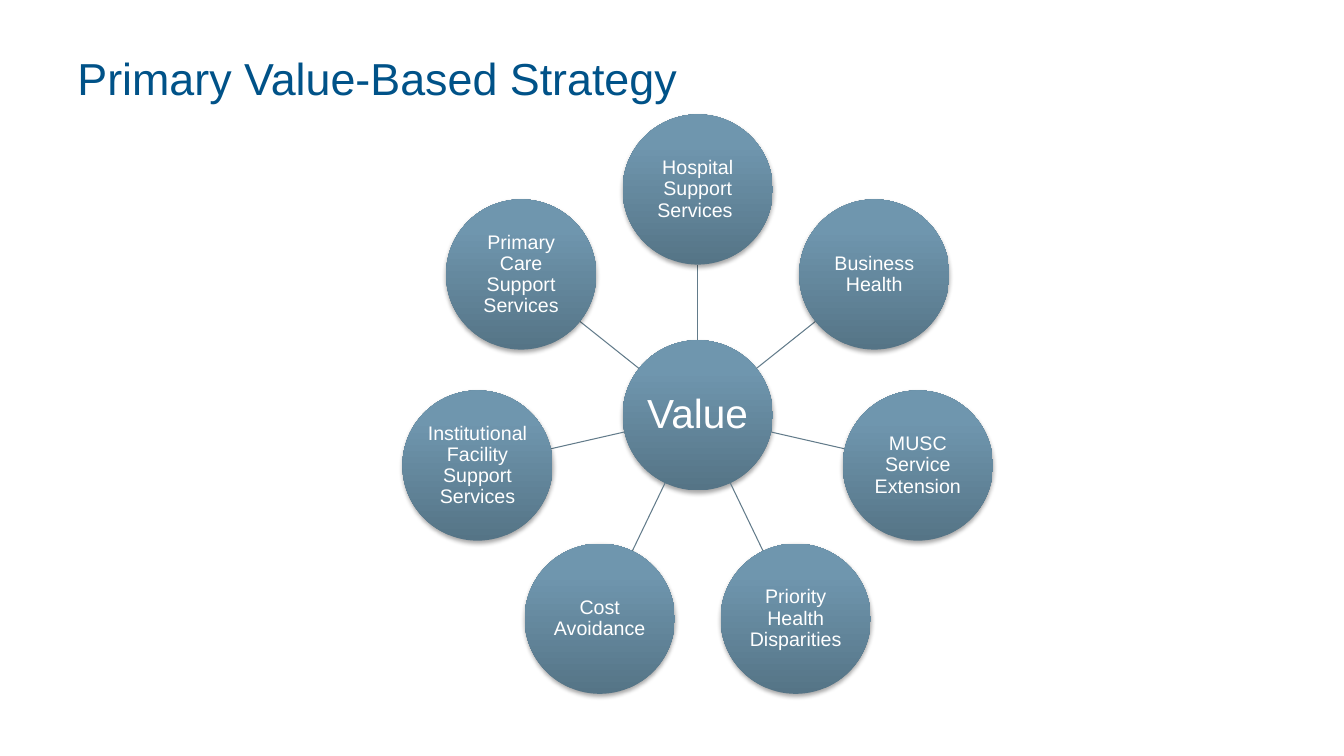
"""Build a hub-and-spoke slide of the value-based strategy."""
from math import cos, pi, sin

from pptx import Presentation
from pptx import util as u
from pptx.dml.color import RGBColor
from pptx.enum import shapes, text
from pptx.oxml import parse_xml
from pptx.oxml.ns import nsdecls, qn

HUB_X, HUB_Y = 6.92, 4.12
SIZE = 1.49
ORBIT = 2.24
STOPS = [(0, "557486"), (80, "6F96AE"), (100, "6E97B0")]
TOPICS = [
    "Hospital Support Services ",
    "Business Health",
    "MUSC Service Extension",
    "Priority Health Disparities",
    "Cost Avoidance",
    "Institutional Facility Support Services",
    "Primary Care Support Services",
]


def color(code):
    """Turn a hex string into a colour."""
    return RGBColor.from_string(code)


def write(shape, words, size, hue="FFFFFF", align=text.PP_ALIGN.CENTER,
          inset=None, spacing=None):
    """Put formatted, vertically centred text in a shape."""
    frame = shape.text_frame
    frame.word_wrap = True
    frame.vertical_anchor = text.MSO_ANCHOR.MIDDLE
    if inset is not None:
        frame.margin_left = frame.margin_right = u.Inches(inset)
        frame.margin_top = frame.margin_bottom = u.Inches(inset)
    para = frame.paragraphs[0]
    para.alignment = align
    para.line_spacing = spacing
    run = para.add_run()
    run.text = words
    run.font.size = u.Pt(size)
    run.font.name = "Arial"
    run.font.color.rgb = color(hue)


def shade(shape):
    """Give a shape the vertical gradient and a soft shadow."""
    shape.line.fill.background()
    shape.shadow.inherit = False
    props = shape._element.spPr
    stops = "".join(
        f'<a:gs pos="{pos * 1000}"><a:srgbClr val="{code}"/></a:gs>'
        for pos, code in STOPS)
    fill = parse_xml(
        f'<a:gradFill {nsdecls("a")} rotWithShape="1"><a:gsLst>{stops}</a:gsLst>'
        '<a:lin ang="16200000" scaled="0"/></a:gradFill>')
    props.find(qn("a:prstGeom")).addnext(fill)
    props.find(qn("a:effectLst")).append(parse_xml(
        f'<a:outerShdw {nsdecls("a")} blurRad="40000" dist="23000" '
        'dir="5400000" rotWithShape="0"><a:srgbClr val="000000">'
        '<a:alpha val="35000"/></a:srgbClr></a:outerShdw>'))


def point(angle, reach):
    """Find the place at a clockwise angle from the top of the hub."""
    return (u.Inches(HUB_X + reach * sin(angle)),
            u.Inches(HUB_Y - reach * cos(angle)))


def circle(slide, words, size, inset, angle=0, reach=0):
    """Add a shaded circle centred at a place around the hub."""
    x, y = point(angle, reach)
    side = u.Inches(SIZE)
    disc = slide.shapes.add_shape(
        shapes.MSO_SHAPE.OVAL, x - side // 2, y - side // 2, side, side)
    shade(disc)
    write(disc, words, size, inset=inset, spacing=0.9)


def spoke(slide, angle):
    """Add a line from the hub's edge to the edge of an outer circle."""
    line = slide.shapes.add_connector(
        shapes.MSO_CONNECTOR.STRAIGHT,
        *point(angle, SIZE / 2), *point(angle, ORBIT - SIZE / 2))
    line.line.color.rgb = color("627B8A")
    line.line.width = u.Pt(0.75)
    line._element.spPr.append(parse_xml(f'<a:effectLst {nsdecls("a")}/>'))


def main():
    """Build and save the slide."""
    deck = Presentation()
    deck.slide_width = u.Inches(13.33)
    deck.slide_height = u.Inches(7.5)
    slide = deck.slides.add_slide(deck.slide_layouts[6])
    title = slide.shapes.add_textbox(
        u.Inches(0.67), u.Inches(0.3), u.Inches(12), u.Inches(0.93))
    write(title, "Primary Value-Based Strategy", 32, hue="005288",
          align=text.PP_ALIGN.LEFT)
    circle(slide, "Value", 29, 0.02)
    for i, topic in enumerate(TOPICS):
        angle = 2 * pi * i / len(TOPICS)
        spoke(slide, angle)
        circle(slide, topic, 14, 0.01, angle, ORBIT)
    deck.save("out.pptx")


if __name__ == "__main__":
    main()
